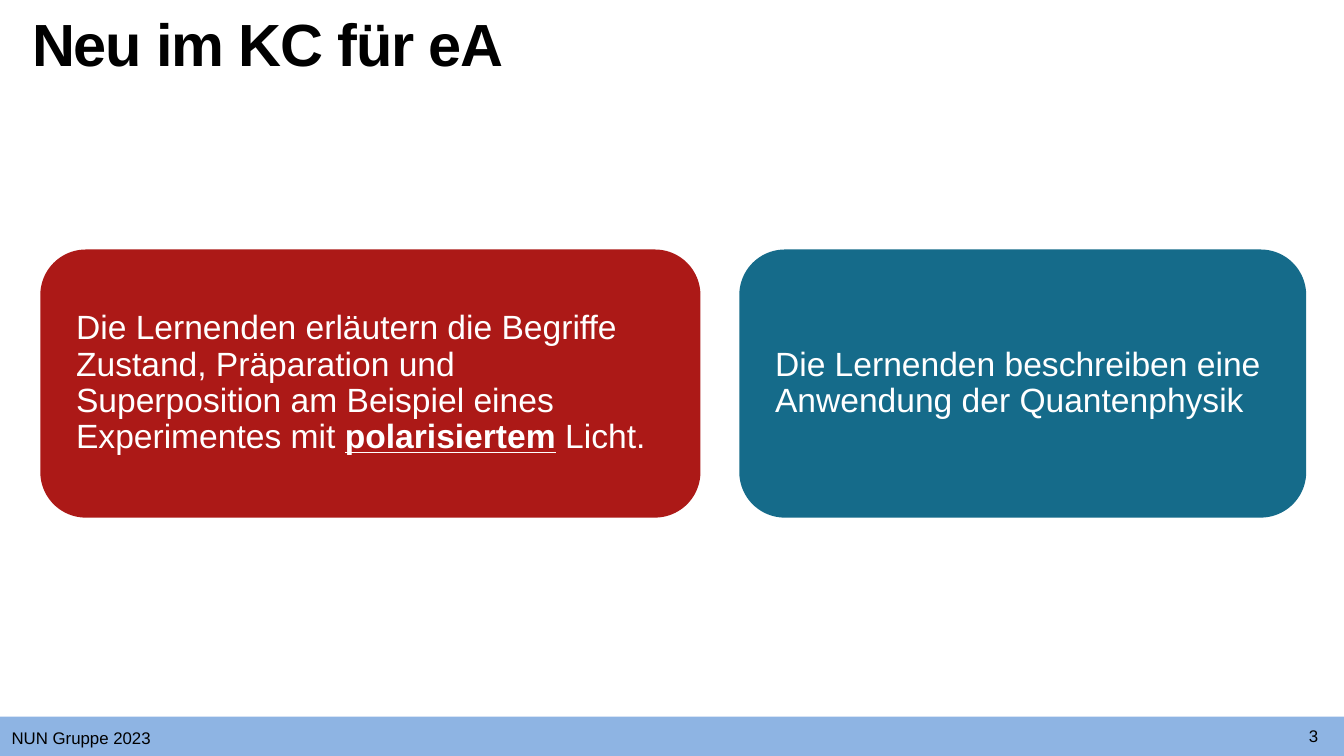
from pptx import Presentation
from pptx.dml.color import RGBColor
from pptx.enum.shapes import MSO_SHAPE
from pptx.enum.text import MSO_ANCHOR, MSO_AUTO_SIZE, PP_ALIGN
from pptx.util import Inches, Pt

BLACK = RGBColor(0x00, 0x00, 0x00)
WHITE = RGBColor(0xFF, 0xFF, 0xFF)
RED = RGBColor(0xAC, 0x19, 0x17)
TEAL = RGBColor(0x15, 0x6B, 0x8A)
LIGHT_BLUE = RGBColor(0x8E, 0xB4, 0xE3)

CARD_TOP = 4.95
CARD_HEIGHT = 5.32
TEXT_INDENT = 0.65
TEXT_WIDTH = 11.81


def write_text(box, spans, size=24, color=BLACK, bold=False, tracking=None,
               line_spacing=None, align=PP_ALIGN.LEFT):
    para = box.text_frame.paragraphs[0]
    para.alignment = align
    para.line_spacing = line_spacing
    for text, emphasized in spans:
        span = para.add_run()
        span.text = text
        span.font.name = "Arial"
        span.font.size = Pt(size)
        span.font.color.rgb = color
        span.font.bold = bold or emphasized
        span.font.underline = emphasized
        if tracking is not None:
            span._r.get_or_add_rPr().set("spc", str(round(tracking * 100)))


class SlideBuilder:
    def __init__(self, page):
        self.page = page

    def block(self, left, top, width, height, fill,
              kind=MSO_SHAPE.RECTANGLE, parent=None):
        shape = (parent or self.page).shapes.add_shape(
            kind, Inches(left), Inches(top), Inches(width), Inches(height))
        shape.shadow.inherit = False
        shape.fill.solid()
        shape.fill.fore_color.rgb = fill
        shape.line.fill.background()
        return shape

    def text(self, left, top, width, height, spans, anchor=MSO_ANCHOR.TOP,
             inset=0.06, wrap=True, grow=False, parent=None, **style):
        box = (parent or self.page).shapes.add_textbox(
            Inches(left), Inches(top), Inches(width), Inches(height))
        frame = box.text_frame
        frame.word_wrap = wrap
        frame.vertical_anchor = anchor
        frame.auto_size = (MSO_AUTO_SIZE.SHAPE_TO_FIT_TEXT if grow
                           else MSO_AUTO_SIZE.NONE)
        frame.margin_left = frame.margin_right = Inches(inset)
        frame.margin_top = frame.margin_bottom = Inches(inset)
        write_text(box, spans, **style)

    def card(self, left, width, fill, text_height, spans):
        group = self.page.shapes.add_group_shape()
        panel = self.block(left, CARD_TOP, width, CARD_HEIGHT, fill,
                           kind=MSO_SHAPE.ROUNDED_RECTANGLE, parent=group)
        panel.adjustments[0] = 0.17
        text_top = CARD_TOP + (CARD_HEIGHT - text_height) / 2
        self.text(left + TEXT_INDENT, text_top, TEXT_WIDTH, text_height, spans,
                  anchor=MSO_ANCHOR.MIDDLE, grow=True, parent=group,
                  size=48, color=WHITE, line_spacing=0.9)


def main():
    deck = Presentation()
    deck.slide_width = Inches(26.67)
    deck.slide_height = Inches(15)
    builder = SlideBuilder(deck.slides.add_slide(deck.slide_layouts[6]))

    builder.block(-0.14, 14.22, 27.25, 0.78, LIGHT_BLUE)
    builder.text(0.18, 14.39, 4.44, 0.7, [("NUN Gruppe 2023", False)],
                 inset=0.05)
    builder.text(0.58, 0.35, 24.03, 1.57, [("Neu im KC für eA", False)],
                 size=85, bold=True, tracking=-1.7, line_spacing=0.8)
    builder.text(25.91, 14.36, 0.31, 0.5, [("3", False)],
                 anchor=MSO_ANCHOR.BOTTOM, wrap=False, grow=True,
                 align=PP_ALIGN.CENTER)

    builder.card(0.8, 13.1, RED, 3.04, [
        ("Die Lernenden erläutern die Begriffe Zustand, Präparation und "
         "Superposition am Beispiel eines Experimentes mit ", False),
        ("polarisiertem", True),
        (" Licht.", False),
    ])
    builder.card(14.67, 11.25, TEAL, 1.6, [
        ("Die Lernenden beschreiben eine Anwendung der Quantenphysik", False),
    ])

    deck.save("out.pptx")


if __name__ == "__main__":
    main()
